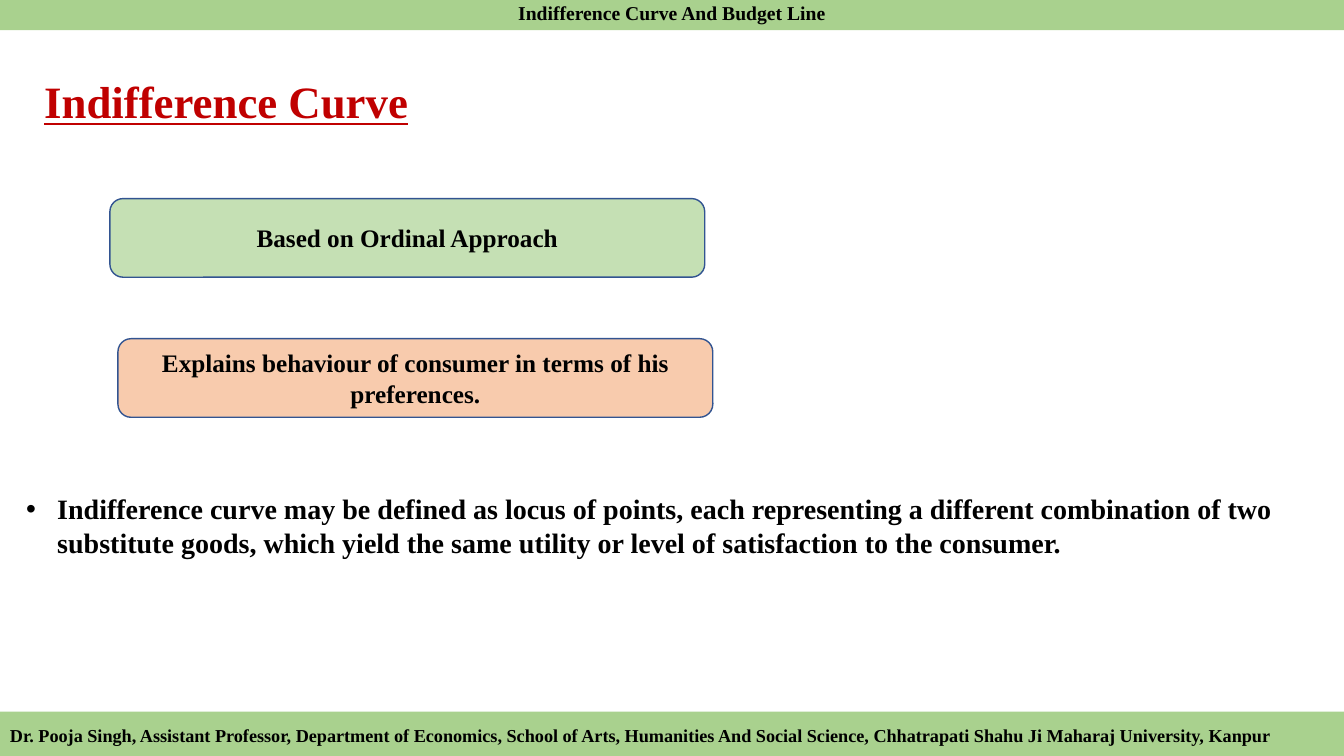
from pptx import Presentation
from pptx.dml.color import RGBColor
from pptx.enum.shapes import MSO_SHAPE as Shape
from pptx.enum.text import MSO_ANCHOR as Anchor, PP_ALIGN as Align
from pptx.util import Inches, Pt
from lxml.etree import SubElement
from pptx.oxml.ns import qn

WIDTH, HEIGHT = 13.33, 7.5
BAR_GREEN = "A9D18E"


def color(hex_string):
    return RGBColor.from_string(hex_string)


class LectureSlide:
    font = "Times New Roman"
    ink = "000000"
    outline = "325491"

    def __init__(self, slide):
        self.shapes = slide.shapes

    def set_text(self, frame, text, size, ink=None, align=Align.LEFT, anchor=Anchor.MIDDLE):
        """Fill a text frame with one bold paragraph and return the paragraph."""
        frame.word_wrap = True
        frame.vertical_anchor = anchor
        frame.text = text
        paragraph = frame.paragraphs[0]
        paragraph.alignment = align
        font = paragraph.runs[0].font
        font.name, font.size, font.bold = self.font, Pt(size), True
        font.color.rgb = color(ink or self.ink)
        return paragraph

    def text_box(self, left, top, width, height, text, size, **style):
        box = self.shapes.add_textbox(*map(Inches, (left, top, width, height)))
        return self.set_text(box.text_frame, text, size, **style)

    def heading(self, left, top, width, height, text):
        paragraph = self.text_box(left, top, width, height, text, 32, ink="C00000")
        paragraph.line_spacing = 0.9
        paragraph.runs[0].font.underline = True

    def bullet(self, left, top, width, height, text):
        paragraph = self.text_box(left, top, width, height, text, 20, anchor=Anchor.TOP)
        properties = paragraph._p.get_or_add_pPr()
        indent = Inches(0.31)
        properties.set("marL", str(indent))
        properties.set("indent", str(-indent))
        SubElement(properties, qn("a:buFont"), typeface="Arial")
        SubElement(properties, qn("a:buChar"), char="•")

    def filled(self, kind, left, top, width, height, fill, text, size, **style):
        shape = self.shapes.add_shape(kind, *map(Inches, (left, top, width, height)))
        shape.shadow.inherit = False
        shape.fill.solid()
        shape.fill.fore_color.rgb = color(fill)
        self.set_text(shape.text_frame, text, size, **style)
        return shape

    def bar(self, top, height, text, size, **style):
        strip = self.filled(Shape.RECTANGLE, 0, top, WIDTH, height, BAR_GREEN, text, size, **style)
        strip.line.fill.background()

    def card(self, left, top, fill, text):
        card = self.filled(Shape.ROUNDED_RECTANGLE, left, top, 5.9, 0.78, fill, text, 18,
                           align=Align.CENTER)
        card.line.color.rgb = color(self.outline)
        card.line.width = Pt(1)


def main():
    deck = Presentation()
    deck.slide_width, deck.slide_height = Inches(WIDTH), Inches(HEIGHT)
    lecture = LectureSlide(deck.slides.add_slide(deck.slide_layouts[6]))

    lecture.heading(0.34, 0.72, 4.74, 0.63, "Indifference Curve")
    lecture.card(1.09, 1.97, "C5E0B4", "Based on Ordinal Approach")
    lecture.card(1.17, 3.36, "F8CBAD",
                 "Explains behaviour of consumer in terms of his preferences.")
    lecture.bullet(0.16, 4.83, 12.9, 1.11,
                   "Indifference curve may be defined as locus of points, each representing "
                   "a different combination of two substitute goods, which yield the same "
                   "utility or level of satisfaction to the consumer.")
    lecture.bar(-0.04, 0.34, "Indifference Curve And Budget Line", 14,
                align=Align.CENTER, anchor=Anchor.TOP)
    lecture.bar(7.06, 0.46,
                "Dr. Pooja Singh, Assistant Professor, Department of Economics, School of Arts, "
                "Humanities And Social Science, Chhatrapati Shahu Ji Maharaj University, Kanpur",
                13)
    deck.save("out.pptx")


if __name__ == "__main__":
    main()
